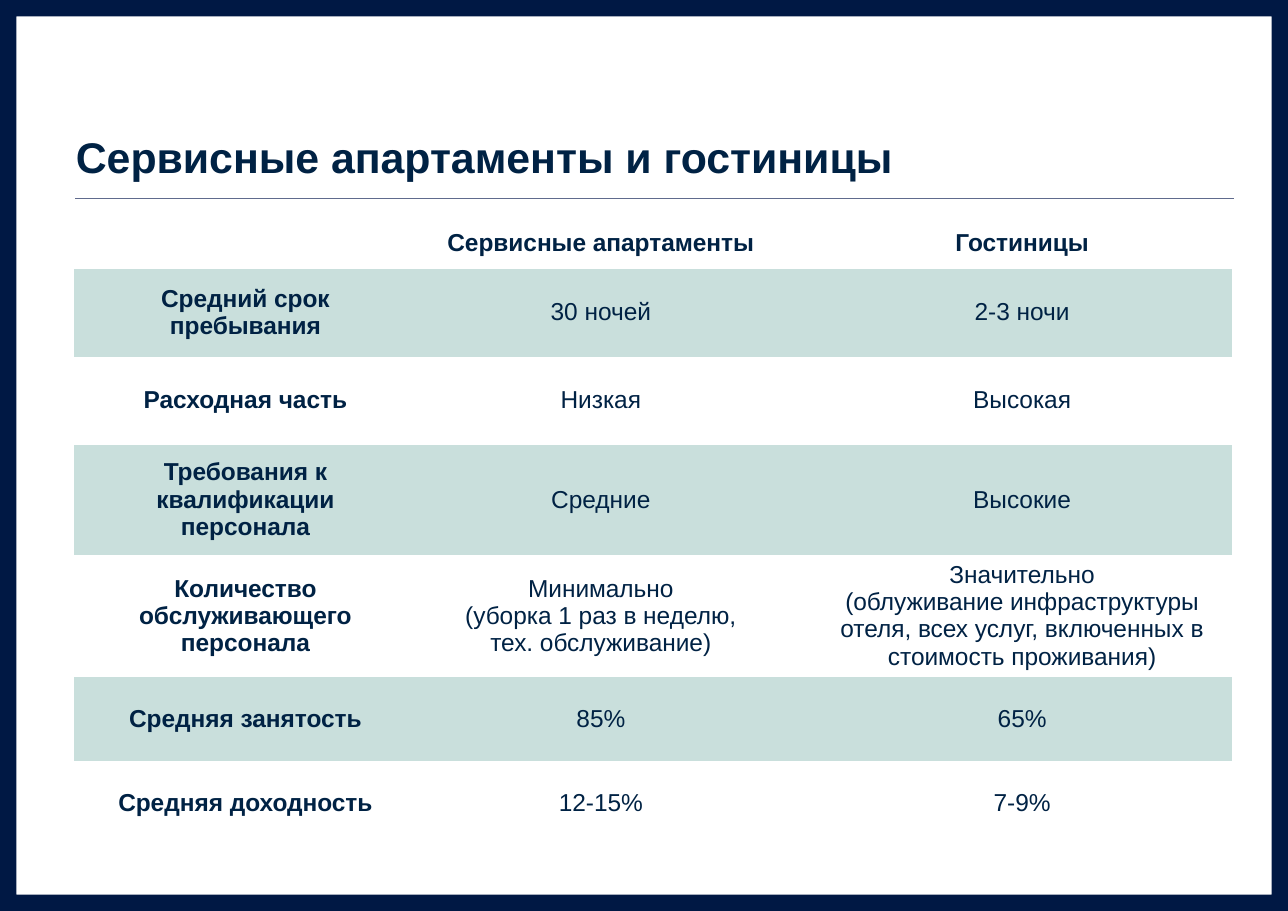
"""Builds a slide comparing serviced apartments with hotels."""
import pptx
import pptx.util
import pptx.dml.color
import pptx.enum.shapes
import pptx.enum.text
import pptx.oxml.ns
import lxml.etree

Cm, Pt = pptx.util.Cm, pptx.util.Pt
ALIGN = pptx.enum.text.PP_ALIGN
ANCHOR = pptx.enum.text.MSO_ANCHOR
qn = pptx.oxml.ns.qn

TITLE = "Сервисные апартаменты и гостиницы"
ROWS = [
    ("", "Сервисные апартаменты", "Гостиницы"),
    ("Средний срок пребывания", "30 ночей", "2-3 ночи"),
    ("Расходная часть", "Низкая", "Высокая"),
    ("Требования к квалификации персонала", "Средние", "Высокие"),
    ("Количество обслуживающего персонала",
     "Минимально\n(уборка 1 раз в неделю,\nтех. обслуживание)",
     "Значительно\n(облуживание инфраструктуры отеля, "
     "всех услуг, включенных в стоимость проживания)"),
    ("Средняя занятость", "85%", "65%"),
    ("Средняя доходность", "12-15%", "7-9%"),
]
ROW_HEIGHTS = [1.47, 2.03, 2.03, 2.54, 2.82, 1.94, 1.94]
COL_WIDTHS = [7.29, 9.73, 9.7]
SHADED_ROWS = (1, 3, 5)
NO_GRID_STYLE = "{2D5ABB26-0587-4C30-8999-92F81FD0307C}"
NAVY, INK, RULE, MINT = "001844", "002244", "606B8D", "C9DFDC"


def color(value):
    return pptx.dml.color.RGBColor.from_string(value)


def apply(obj, values):
    for name, value in values.items():
        setattr(obj, name, value)


def style(p, size, bold):
    apply(p.font, {"name": "Arial", "size": Pt(size), "bold": bold})
    p.font.color.rgb = color(INK)


def add_frame(s, prs):
    sp = s.shapes.add_shape(pptx.enum.shapes.MSO_SHAPE.FRAME, 0, 0,
                            prs.slide_width, prs.slide_height)
    sp.shadow.inherit = False
    sp.adjustments[0] = 0.018
    sp.fill.solid()
    sp.fill.fore_color.rgb = color(NAVY)
    sp.line.fill.background()


def add_rule(s):
    y = Cm(4.57)
    sp = s.shapes.add_connector(pptx.enum.shapes.MSO_CONNECTOR.STRAIGHT,
                                Cm(1.73), y, Cm(28.45), y)
    sp.line.color.rgb = color(RULE)
    sp.line.width = Pt(0.75)
    lxml.etree.SubElement(sp._element.spPr, qn("a:effectLst"))


def add_title(s):
    tf = s.shapes.add_textbox(Cm(1.47), Cm(0.84), Cm(26.75), Cm(3.5)).text_frame
    apply(tf, {"word_wrap": True, "vertical_anchor": ANCHOR.BOTTOM,
               "margin_left": Cm(0.28), "margin_right": Cm(0.28),
               "margin_top": Cm(0.15), "margin_bottom": Cm(0.15)})
    p = tf.paragraphs[0]
    p.text = TITLE
    style(p, 28, True)


def add_comparison(s):
    sp = s.shapes.add_table(len(ROWS), len(COL_WIDTHS), Cm(1.7), Cm(4.72),
                            Cm(sum(COL_WIDTHS)), Cm(sum(ROW_HEIGHTS)))
    table = sp.table
    apply(table, {"first_row": False, "horz_banding": False})
    next(sp._element.iter(qn("a:tableStyleId"))).text = NO_GRID_STYLE
    for column, width in zip(table.columns, COL_WIDTHS):
        column.width = Cm(width)
    for i, (row, height) in enumerate(zip(table.rows, ROW_HEIGHTS)):
        row.height = Cm(height)
        for j, cell in enumerate(row.cells):
            apply(cell, {"text": ROWS[i][j], "vertical_anchor": ANCHOR.MIDDLE,
                         "margin_left": Cm(0.18 if j else 0.81),
                         "margin_right": Cm(0.18),
                         "margin_top": 0, "margin_bottom": 0})
            if i in SHADED_ROWS:
                cell.fill.solid()
                cell.fill.fore_color.rgb = color(MINT)
            else:
                cell.fill.background()
            for p in cell.text_frame.paragraphs:
                apply(p, {"alignment": ALIGN.CENTER,
                          "line_spacing": 1.0 if i else 1.5})
                style(p, 16, i == 0 or j == 0)


def main():
    prs = pptx.Presentation()
    apply(prs, {"slide_width": Cm(29.7), "slide_height": Cm(21)})
    s = prs.slides.add_slide(prs.slide_layouts[6])
    add_frame(s, prs)
    add_rule(s)
    add_title(s)
    add_comparison(s)
    prs.save("out.pptx")


if __name__ == "__main__":
    main()
